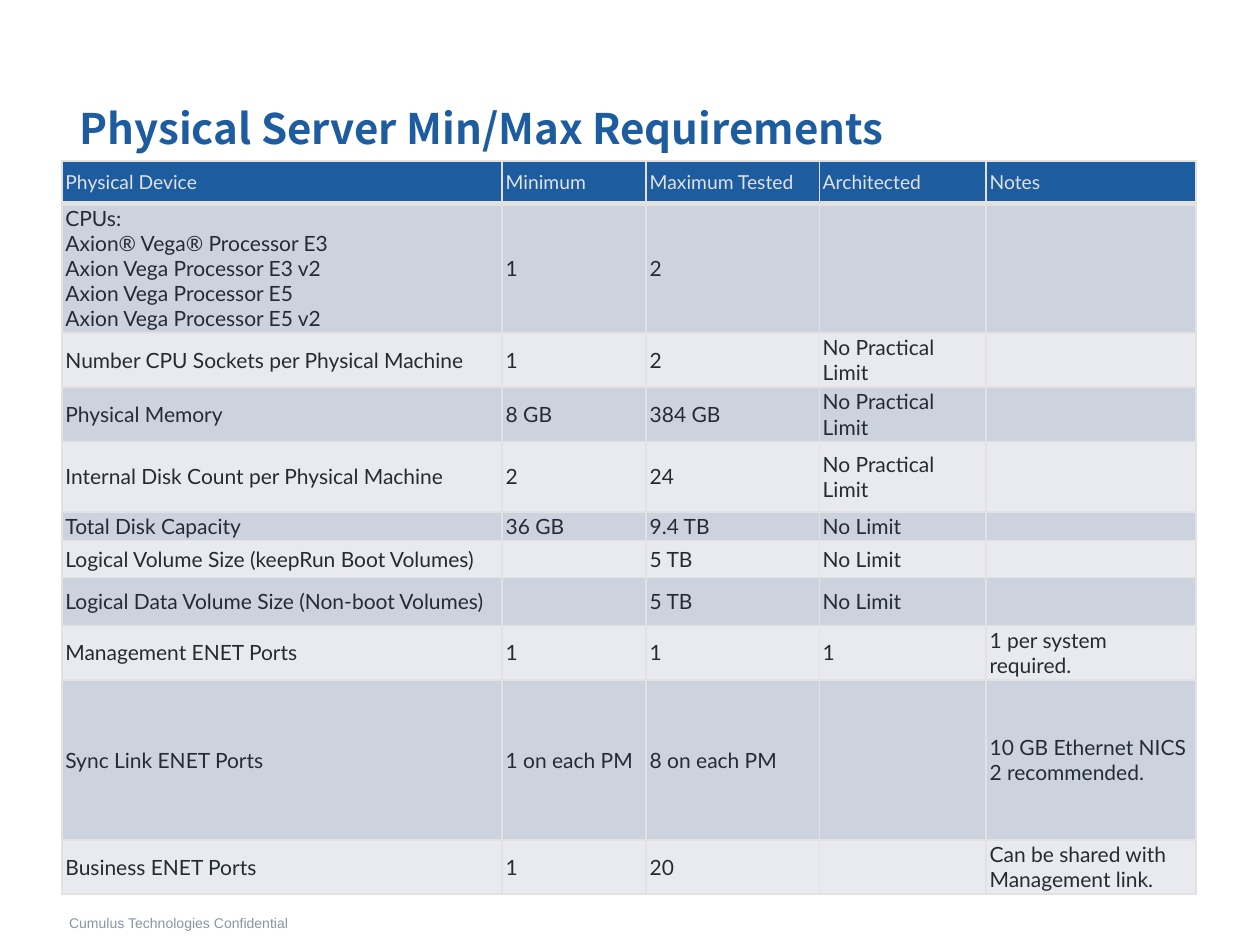
"""Build a slide with a table of physical server minimum and maximum requirements."""
from lxml.etree import SubElement
from pptx import Presentation
from pptx.dml.color import RGBColor
from pptx.enum.text import MSO_ANCHOR as Anchor
from pptx.oxml.ns import qn
from pptx.util import Pt

BACKGROUND = RGBColor(0xFE, 0xFF, 0xFE)
BLUE = RGBColor(0x1D, 0x5C, 0x9F)
LIGHT = RGBColor(0xE1, 0xE2, 0xE1)
INK = RGBColor(0x24, 0x2C, 0x32)
GREY = RGBColor(0x84, 0x97, 0xA6)
BANDS = [RGBColor(0xE8, 0xEA, 0xF0), RGBColor(0xCD, 0xD2, 0xDF)]

COLUMN_WIDTHS = [251.6, 82.3, 98.9, 95.4, 119.8]
NO_LIMIT = "No Practical Limit"
CPUS = [
    "CPUs:",
    "Axion® Vega® Processor E3",
    "Axion Vega Processor E3 v2",
    "Axion Vega Processor E5",
    "Axion Vega Processor E5 v2",
]
ROWS = [
    (24.2, ["Physical Device", "Minimum", "Maximum Tested", "Architected", "Notes"]),
    (74.2, ["\n".join(CPUS), "1", "2", "", ""]),
    (30.9, ["Number CPU Sockets per Physical Machine", "1", "2", NO_LIMIT, ""]),
    (30.9, ["Physical Memory", "8 GB", "384 GB", NO_LIMIT, ""]),
    (40.5, ["Internal Disk Count per Physical Machine", "2", "24", NO_LIMIT, ""]),
    (16.2, ["Total Disk Capacity", "36 GB", "9.4 TB", "No Limit", ""]),
    (21.1, ["Logical Volume Size (keepRun Boot Volumes)", "", "5 TB", "No Limit", ""]),
    (27.4, ["Logical Data Volume Size (Non-boot Volumes)", "", "5 TB", "No Limit", ""]),
    (31.2, ["Management ENET Ports", "1", "1", "1", "1 per system required."]),
    (91.4, ["Sync Link ENET Ports", "1 on each PM", "8 on each PM", "",
            "10 GB Ethernet NICS 2 recommended."]),
    (30.9, ["Business ENET Ports", "1", "20", "", "Can be shared with Management link."]),
]


def add_span(para, text, size, font, color, bold=False):
    span = para.add_run()
    span.text = text
    span.font.size = Pt(size)
    span.font.name = font
    span.font.color.rgb = color
    span.font.bold = bold


def add_border(cell, side, width):
    line = SubElement(cell._tc.get_or_add_tcPr(), qn(f"a:ln{side}"), w=str(Pt(width)))
    fill = SubElement(line, qn("a:solidFill"))
    SubElement(fill, qn("a:srgbClr"), val=str(LIGHT))


deck = Presentation()
deck.slide_width, deck.slide_height = Pt(720), Pt(540)
page = deck.slides.add_slide(deck.slide_layouts[6])
page.background.fill.solid()
page.background.fill.fore_color.rgb = BACKGROUND

LABELS = [
    ((38.2, 49.7, 540.7, 49.7), "Physical Server Min/Max Requirements",
     24, "Noto Sans CJK KR", BLUE, True, 0.9),
    ((32.4, 515.5, 633.6, 23.8), "Cumulus Technologies Confidential",
     8, "Arial", GREY, False, 1.0),
]
for place, text, size, font, color, bold, spacing in LABELS:
    box = page.shapes.add_textbox(*map(Pt, place))
    box.text_frame.word_wrap = True
    box.text_frame.vertical_anchor = Anchor.MIDDLE
    para = box.text_frame.paragraphs[0]
    para.line_spacing = spacing
    add_span(para, text, size, font, color, bold)

table = page.shapes.add_table(
    len(ROWS), len(COLUMN_WIDTHS), Pt(35.4), Pt(92), Pt(648), Pt(419)
).table
for column, width in zip(table.columns, COLUMN_WIDTHS):
    column.width = Pt(width)

for row_index, (height, texts) in enumerate(ROWS):
    table.rows[row_index].height = Pt(height)
    header = row_index == 0
    size, color = (11, LIGHT) if header else (12, INK)
    for column_index, text in enumerate(texts):
        cell = table.cell(row_index, column_index)
        for side in "LRTB":
            add_border(cell, side, 3 if header and side == "B" else 1)
        cell.fill.solid()
        cell.fill.fore_color.rgb = BLUE if header else BANDS[row_index % 2]
        cell.vertical_anchor = Anchor.MIDDLE
        cell.margin_left = cell.margin_right = Pt(2)
        cell.margin_top = cell.margin_bottom = Pt(0.7)
        frame = cell.text_frame
        if not text:
            SubElement(frame.paragraphs[0]._p, qn("a:endParaRPr"), sz=str(size * 100))
            continue
        for line_index, line in enumerate(text.split("\n")):
            para = frame.add_paragraph() if line_index else frame.paragraphs[0]
            add_span(para, line, size, "Lato", color)

deck.save("out.pptx")
